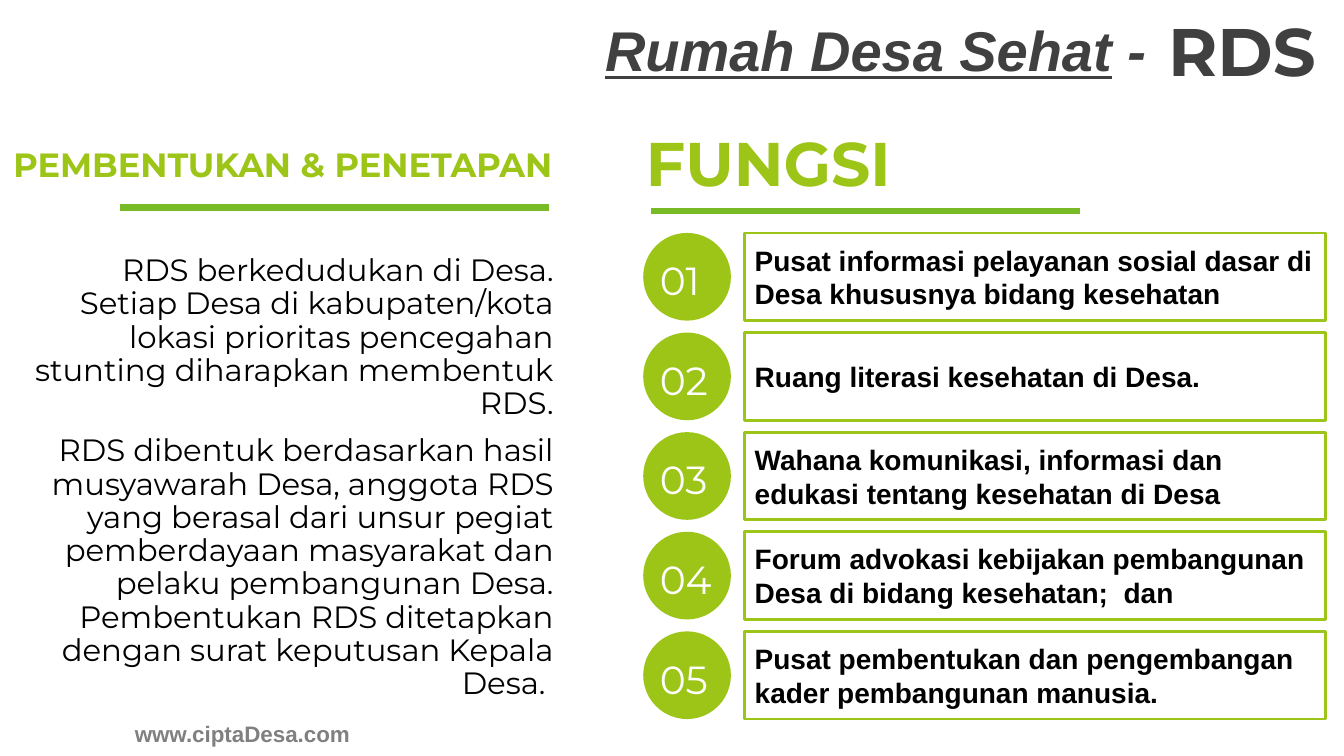
from dataclasses import dataclass

from lxml import etree
from pptx import Presentation, util as u
from pptx.dml.color import RGBColor
from pptx.enum import shapes, text
from pptx.oxml.ns import qn


@dataclass(frozen=True)
class Theme:
    lime: RGBColor = RGBColor(0x9D, 0xC5, 0x18)
    rule: RGBColor = RGBColor(0x79, 0xBA, 0x27)
    dark: RGBColor = RGBColor(0x40, 0x40, 0x40)
    gray: RGBColor = RGBColor(0x80, 0x80, 0x80)
    black: RGBColor = RGBColor(0, 0, 0)
    white: RGBColor = RGBColor(0xFF, 0xFF, 0xFF)
    sans: str = "Arial"
    display: str = "Montserrat"
    footer: int = 16
    item: int = 20
    body: int = 22
    heading: int = 24
    number: int = 28
    title: int = 40
    function: int = 44
    acronym: int = 48


theme = Theme()
LEFT, CENTER, RIGHT = text.PP_ALIGN.LEFT, text.PP_ALIGN.CENTER, text.PP_ALIGN.RIGHT


def write(box, lines, font, size, color, bold=False, align=LEFT, spacing=None):
    frame = box.text_frame
    frame.word_wrap = True
    frame.vertical_anchor = text.MSO_ANCHOR.MIDDLE
    frame.text = "\n".join(lines)
    for index, para in enumerate(frame.paragraphs):
        para.alignment = align
        para.line_spacing = spacing
        if index:
            para.space_before = u.Pt(10)
        for span in para.runs:
            span.font.name = font
            span.font.size = u.Pt(size)
            span.font.bold = bold
            span.font.color.rgb = color
    return frame


def fit(frame):
    frame.word_wrap = False
    frame.vertical_anchor = text.MSO_ANCHOR.TOP
    frame.auto_size = text.MSO_AUTO_SIZE.SHAPE_TO_FIT_TEXT


deck = Presentation()
deck.slide_width, deck.slide_height = u.Cm(33.87), u.Cm(19.05)
page = deck.slides.add_slide(deck.slide_layouts[6])

# Footer
footer = page.shapes.add_textbox(u.Cm(3.1), u.Cm(18.03), u.Cm(6.02), u.Cm(0.94))
fit(write(footer, ["www.ciptaDesa.com"], theme.sans, theme.footer, theme.gray, True, CENTER))

# Title and acronym
title = page.shapes.add_textbox(u.Cm(0.48), u.Cm(0.41), u.Cm(28.65), u.Cm(1.85))
para = write(title, ["Rumah Desa Sehat"], theme.sans, theme.title, theme.dark,
             True, RIGHT, 0.9).paragraphs[0]
para.runs[0].font.underline = True
dash = para.add_run()
dash.text = " -"
dash.font.name = theme.sans
dash.font.size = u.Pt(theme.title)
dash.font.bold = True
dash.font.color.rgb = theme.dark
for span in para.runs:
    span.font.italic = True

acronym = page.shapes.add_textbox(u.Cm(26.09), u.Cm(0.46), u.Cm(7.32), u.Cm(1.85))
write(acronym, ["RDS"], theme.display, theme.acronym, theme.dark, True, RIGHT, 0.9)

# Column headings
for heading, left, size, align in [
    ("PEMBENTUKAN & PENETAPAN", -0.05, theme.heading, RIGHT),
    ("FUNGSI", 16.03, theme.function, LEFT),
]:
    box = page.shapes.add_textbox(u.Cm(left), u.Cm(3.28), u.Cm(14.22), u.Cm(1.85))
    write(box, [heading], theme.display, size, theme.lime, True, align, 0.9)

# Rules under the headings
for left, top in [(3.02, 5.23), (16.41, 5.31)]:
    rule = page.shapes.add_connector(
        shapes.MSO_CONNECTOR.STRAIGHT, u.Cm(left), u.Cm(top), u.Cm(left + 10.81), u.Cm(top))
    rule.line.color.rgb = theme.rule
    rule.line.width = u.Pt(4.5)
    etree.SubElement(rule.element.spPr, qn("a:effectLst"))

# Formation text
formation = page.shapes.add_textbox(u.Cm(0.48), u.Cm(5.89), u.Cm(13.72), u.Cm(12.32))
write(formation, [
    "RDS berkedudukan di Desa. Setiap Desa di kabupaten/kota lokasi prioritas "
    "pencegahan stunting diharapkan membentuk RDS.",
    "RDS dibentuk berdasarkan hasil musyawarah Desa, anggota RDS yang berasal dari "
    "unsur pegiat pemberdayaan masyarakat dan pelaku pembangunan Desa. Pembentukan "
    "RDS ditetapkan dengan surat keputusan Kepala Desa. ",
], theme.display, theme.body, theme.black, False, RIGHT, 0.9)

# Numbered functions
functions = [
    "Pusat informasi pelayanan sosial dasar di Desa khususnya bidang kesehatan",
    "Ruang literasi kesehatan di Desa.",
    "Wahana komunikasi, informasi dan edukasi tentang kesehatan di Desa",
    "Forum advokasi kebijakan pembangunan Desa di bidang kesehatan;  dan",
    "Pusat pembentukan dan pengembangan kader pembangunan manusia.",
]
row_top, row_pitch, row_height = 5.87, 2.51, 2.21
for index, function in enumerate(functions):
    top = row_top + index * row_pitch

    card = page.shapes.add_shape(
        shapes.MSO_SHAPE.RECTANGLE, u.Cm(18.77), u.Cm(top), u.Cm(14.63), u.Cm(row_height))
    card.shadow.inherit = False
    card.fill.background()
    card.line.color.rgb = theme.lime
    card.line.width = u.Pt(2)
    write(card, [function], theme.sans, theme.item, theme.black, True)

    disc = page.shapes.add_shape(
        shapes.MSO_SHAPE.OVAL, u.Cm(16.21), u.Cm(top), u.Cm(row_height), u.Cm(row_height))
    disc.shadow.inherit = False
    disc.fill.solid()
    disc.fill.fore_color.rgb = theme.lime
    disc.line.fill.background()

    number = page.shapes.add_textbox(u.Cm(16.38), u.Cm(top + 0.47), u.Cm(1.83), u.Cm(1.45))
    fit(write(number, [f"{index + 1:02}"], theme.display, theme.number, theme.white))

deck.save("out.pptx")
